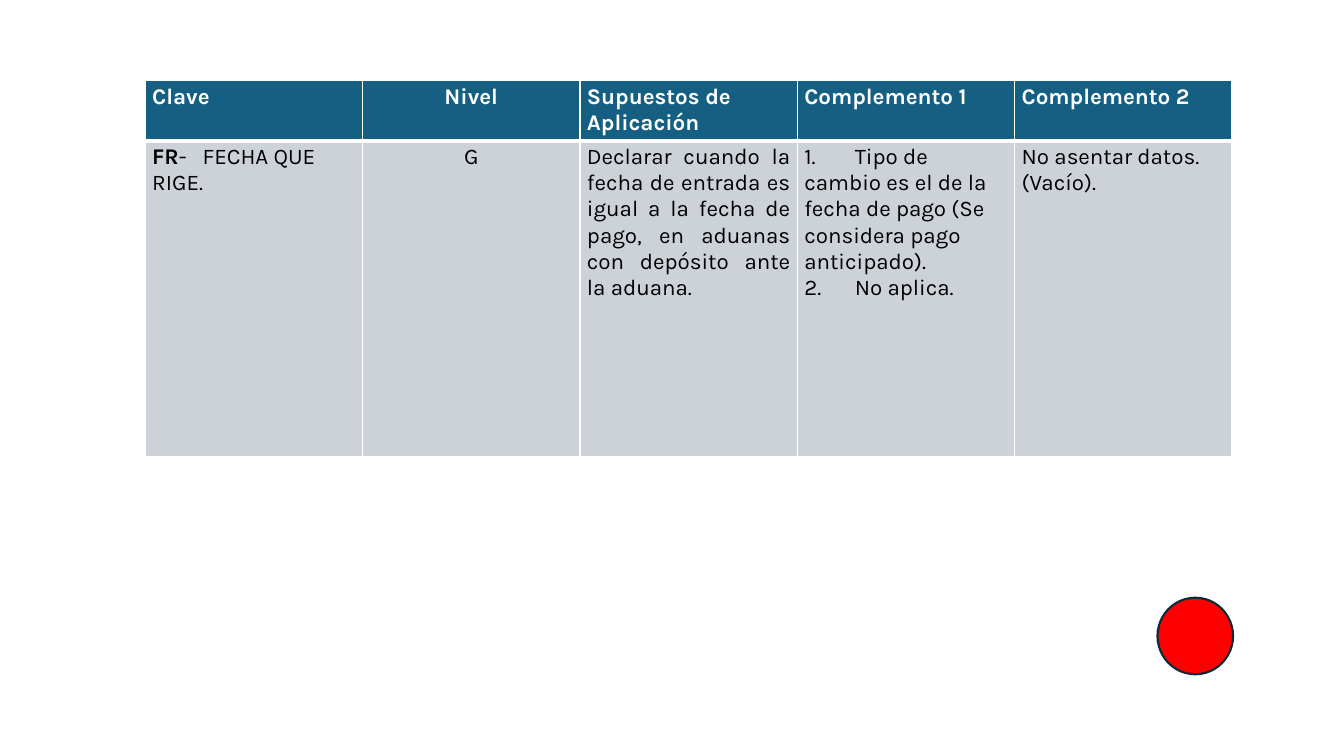
import pptx
import pptx.dml.color
import pptx.enum.shapes
import pptx.enum.text
import pptx.oxml
import pptx.oxml.ns
import pptx.util
from pptx.util import Inches

ALIGN = pptx.enum.text.PP_ALIGN


def color(value):
    return pptx.dml.color.RGBColor.from_string(value)


class SlideBuilder:
    """Hold the shared style and add elements to the current slide."""

    font_format = {"name": "Karla", "size": pptx.util.Pt(16)}
    cell_format = {
        "margin_left": Inches(0.07),
        "margin_right": Inches(0.07),
        "margin_top": Inches(0.03),
        "margin_bottom": Inches(0.03),
    }
    border_color = "FFFFFF"

    def __init__(self, page):
        self.page = page

    def border(self, cell, side, points):
        width = pptx.util.Pt(points)
        line = pptx.oxml.parse_xml(
            f'<a:{side} {pptx.oxml.ns.nsdecls("a")} w="{width}"><a:solidFill>'
            f'<a:srgbClr val="{self.border_color}"/></a:solidFill></a:{side}>'
        )
        cell._tc.get_or_add_tcPr().append(line)

    def cell(self, cell, paragraphs, align, fill, text_color, bottom):
        for name, value in self.cell_format.items():
            setattr(cell, name, value)
        for side, points in {"lnL": 1, "lnR": 1, "lnT": 1, "lnB": bottom}.items():
            self.border(cell, side, points)
        cell.fill.solid()
        cell.fill.fore_color.rgb = color(fill)
        for index, spans in enumerate(paragraphs):
            frame = cell.text_frame
            para = frame.add_paragraph() if index else frame.paragraphs[0]
            para.alignment = align
            for text, bold in spans:
                span = para.add_run()
                span.text = text
                for name, value in {**self.font_format, "bold": bold}.items():
                    setattr(span.font, name, value)
                span.font.color.rgb = color(text_color)

    def table(self, left, top, width, heights, rows, styles):
        columns = len(rows[0])
        frame = self.page.shapes.add_table(
            len(rows), columns, Inches(left), Inches(top),
            Inches(width), Inches(sum(heights)),
        )
        table = frame.table
        for column in table.columns:
            column.width = Inches(width / columns)
        for row_index, (row, height, style) in enumerate(zip(rows, heights, styles)):
            table.rows[row_index].height = Inches(height)
            for column_index, (paragraphs, align) in enumerate(row):
                self.cell(table.cell(row_index, column_index), paragraphs, align, **style)

    def ellipse(self, left, top, width, height, fill, line, points):
        shape = self.page.shapes.add_shape(
            pptx.enum.shapes.MSO_SHAPE.OVAL,
            Inches(left), Inches(top), Inches(width), Inches(height),
        )
        shape.shadow.inherit = False
        shape.fill.solid()
        shape.fill.fore_color.rgb = color(fill)
        shape.line.color.rgb = color(line)
        shape.line.width = pptx.util.Pt(points)


def main():
    deck = pptx.Presentation()
    deck.slide_width = Inches(13.33)
    deck.slide_height = Inches(7.5)
    builder = SlideBuilder(deck.slides.add_slide(deck.slide_layouts[6]))

    titles = ["Clave", "Nivel", "Supuestos de Aplicación", "Complemento 1", "Complemento 2"]
    header = [
        ([[(title, True)]], ALIGN.CENTER if title == "Nivel" else ALIGN.LEFT)
        for title in titles
    ]
    supuesto = (
        "Declarar cuando la fecha de entrada es igual a la fecha de pago, "
        "en aduanas con depósito ante la aduana."
    )
    tipo = "1.\tTipo de cambio es el de la fecha de pago (Se considera pago anticipado)."
    body = [
        ([[("FR", True), ("-\tFECHA QUE RIGE.", False)]], ALIGN.LEFT),
        ([[("G", False)]], ALIGN.CENTER),
        ([[(supuesto, False)]], ALIGN.JUSTIFY),
        ([[(tipo, False)], [("2.\tNo aplica.", False)]], ALIGN.LEFT),
        ([[("No asentar datos. (Vacío).", False)]], ALIGN.LEFT),
    ]
    styles = [
        {"fill": "156082", "text_color": "FFFFFF", "bottom": 3},
        {"fill": "CCD2D8", "text_color": "000000", "bottom": 1},
    ]
    builder.table(1.44, 0.8, 10.78, [0.6, 3.13], [header, body], styles)
    builder.ellipse(11.48, 5.93, 0.75, 0.76, "FF0000", "092A39", 1.5)
    deck.save("out.pptx")


if __name__ == "__main__":
    main()
